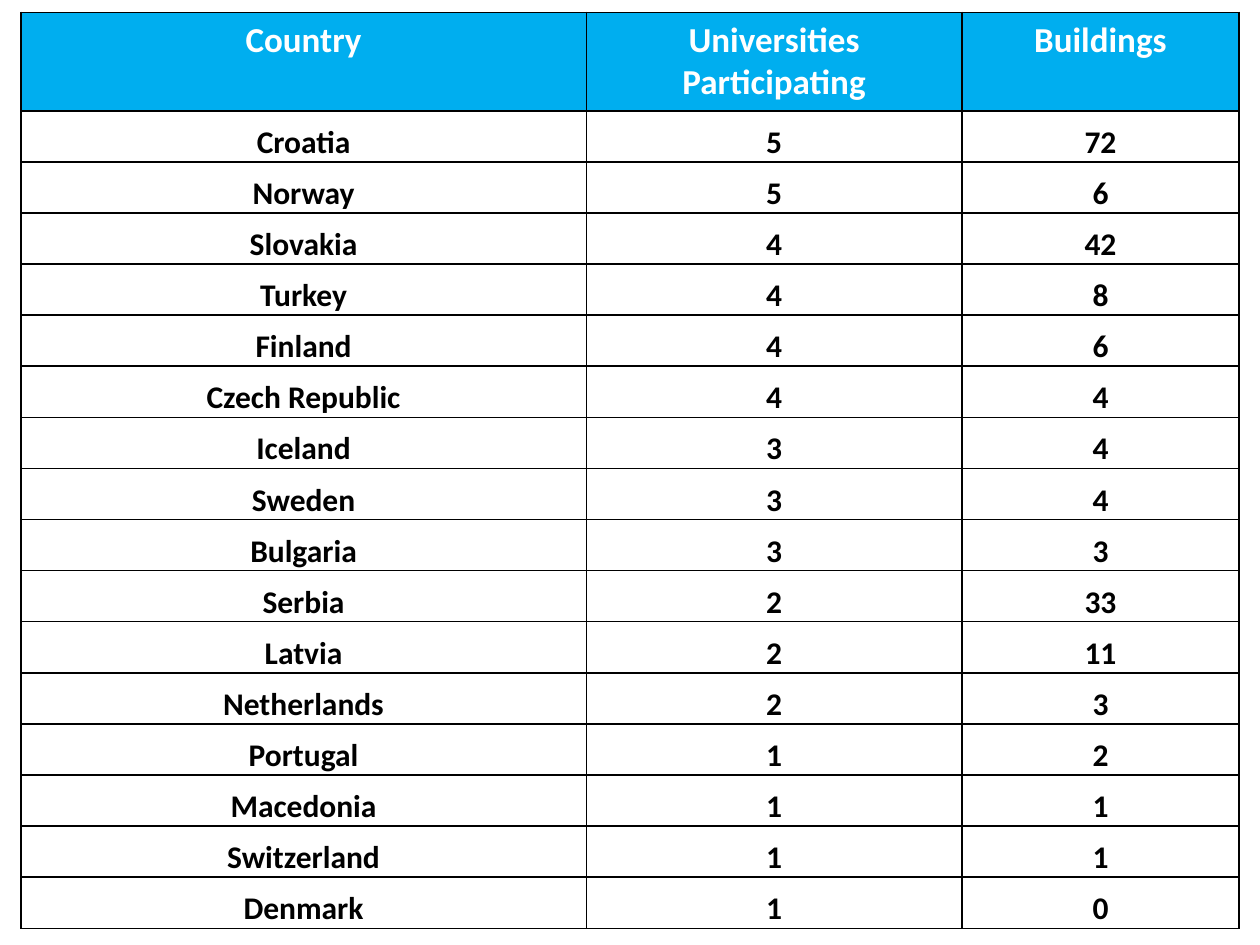
from lxml.etree import SubElement
from pptx import Presentation
from pptx.dml.color import RGBColor
from pptx.enum.text import MSO_ANCHOR, PP_ALIGN
from pptx.oxml.ns import qn
from pptx.util import Cm, Pt

COLORS = {"header": "00AEEF", "white": "FFFFFF", "black": "000000"}
HEADERS = ("Country", "Universities Participating", "Buildings")
ROWS = [
    ("Croatia", 5, 72),
    ("Norway", 5, 6),
    ("Slovakia", 4, 42),
    ("Turkey", 4, 8),
    ("Finland", 4, 6),
    ("Czech Republic", 4, 4),
    ("Iceland", 3, 4),
    ("Sweden", 3, 4),
    ("Bulgaria", 3, 3),
    ("Serbia", 2, 33),
    ("Latvia", 2, 11),
    ("Netherlands", 2, 3),
    ("Portugal", 1, 2),
    ("Macedonia", 1, 1),
    ("Switzerland", 1, 1),
    ("Denmark", 1, 0),
]


class SlideBuilder:
    font = "Calibri"
    header_size = 20
    body_size = 18

    def __init__(self, s):
        self.s = s

    def borders(self, cell):
        tc_pr = cell._tc.get_or_add_tcPr()
        for side in ("a:lnL", "a:lnR", "a:lnT", "a:lnB"):
            ln = SubElement(tc_pr, qn(side), w=str(Pt(1)))
            fill = SubElement(ln, qn("a:solidFill"))
            SubElement(fill, qn("a:srgbClr"), val=COLORS["black"])

    def cell(self, cell, text, is_header):
        self.borders(cell)
        if is_header:
            cell.fill.solid()
            cell.fill.fore_color.rgb = RGBColor.from_string(COLORS["header"])
        else:
            cell.fill.background()
            cell.vertical_anchor = MSO_ANCHOR.BOTTOM
            cell.margin_left = cell.margin_right = cell.margin_top = Cm(0.02)
            cell.margin_bottom = 0
        cell.text_frame.text = str(text)
        p = cell.text_frame.paragraphs[0]
        p.alignment = PP_ALIGN.CENTER
        r = p.runs[0]
        r.font.name = self.font
        r.font.size = Pt(self.header_size if is_header else self.body_size)
        r.font.bold = True
        color = COLORS["white" if is_header else "black"]
        r.font.color.rgb = RGBColor.from_string(color)

    def table(self, left, top, widths, header_height, row_height, data):
        heights = [header_height] + [row_height] * (len(data) - 1)
        table = self.s.shapes.add_table(
            len(data), len(widths), Cm(left), Cm(top),
            Cm(sum(widths)), Cm(sum(heights)),
        ).table
        table.horz_banding = False
        for column, width in zip(table.columns, widths):
            column.width = Cm(width)
        for i, (row, height, values) in enumerate(zip(table.rows, heights, data)):
            row.height = Cm(height)
            for cell, value in zip(row.cells, values):
                self.cell(cell, value, i == 0)


def main():
    prs = Presentation()
    prs.slide_width, prs.slide_height = Cm(25.4), Cm(19.05)
    builder = SlideBuilder(prs.slides.add_slide(prs.slide_layouts[6]))
    builder.table(0.42, 0.25, (11.4, 7.57, 5.59), 1.88, 1.03, [HEADERS, *ROWS])
    prs.save("out.pptx")


if __name__ == "__main__":
    main()
